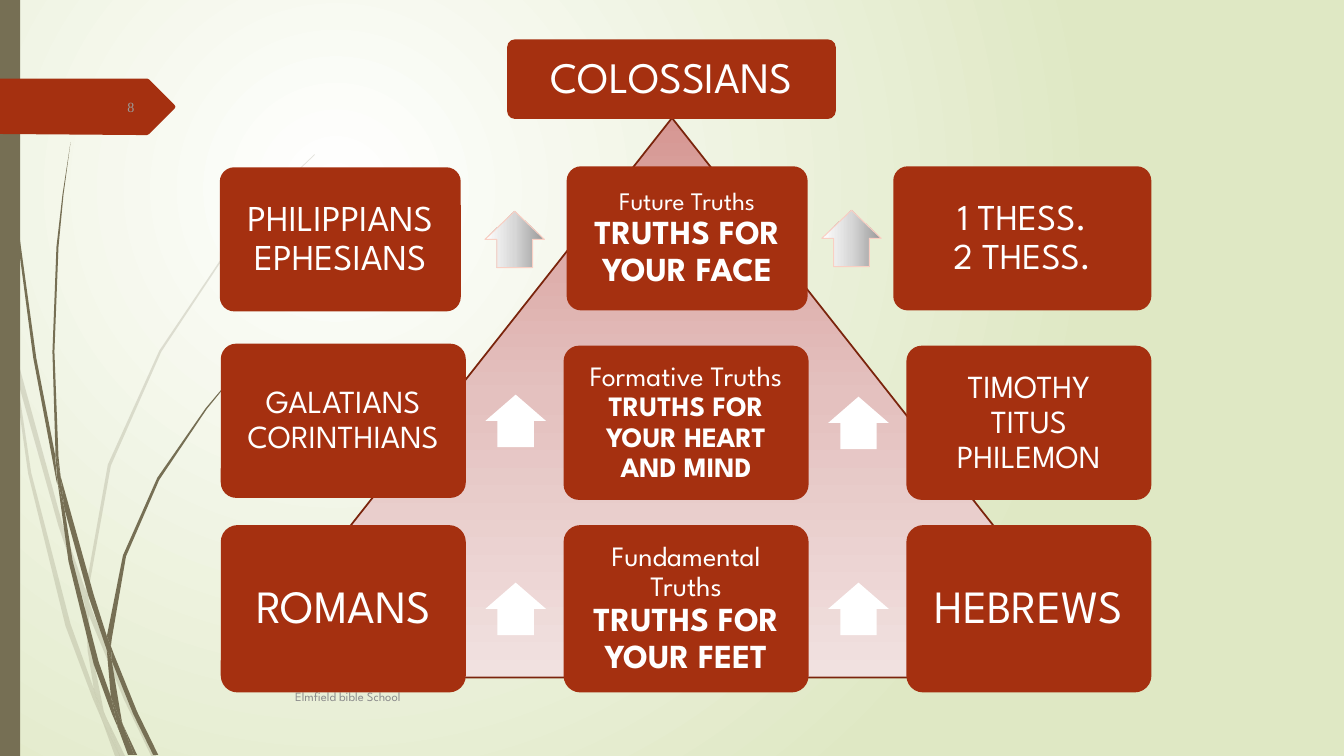
from lxml import etree
from pptx import Presentation
from pptx.dml.color import RGBColor
from pptx.enum.shapes import MSO_SHAPE as Shape
from pptx.enum.text import MSO_ANCHOR as Anchor, PP_ALIGN as Align
from pptx.oxml.ns import qn
from pptx.util import Inches, Pt

THEME = {
    "card": "A53010", "text": "FFFFFF", "wisp": "766F54", "outline": "7A240C",
    "arrow_edge": "F9CFC3", "footer": "8C8C8C", "number": "9B9A98",
    "font": "League Spartan", "number_font": "Times New Roman",
    "footer_size": 9, "number_size": 10,
    "page": [(0, "FFFFFF"), (100, "DFE8C4")],
    "pyramid": [(0, "D69793"), (50, "E4C1BF"), (100, "F1E1E0")],
    "silver": [(0, "979797"), (50, "D7D7D7"), (100, "FFFFFF")],
}

# Cards: left, top, width, inset, lines of (text, size, bold)
TITLE = (5.03, 0.39, 3.26, 0.15, [("COLOSSIANS", 31, False)])
TITLE_HEIGHT = 0.79
ROWS = [
    {"height": 1.43, "arrow": (0.56, 0.59), "silver": True, "cards": [
        (2.18, 1.66, 2.39, 0.15, [("PHILIPPIANS", 26, False), ("EPHESIANS", 26, False)]),
        (5.62, 1.65, 2.39, 0.11, [("Future Truths", 18, False), ("TRUTHS FOR YOUR FACE", 24, True)]),
        (8.86, 1.65, 2.56, 0.15, [("1 THESS.", 26, False), ("2 THESS.", 26, False)])]},
    {"height": 1.53, "arrow": (0.52, 0.6), "silver": False, "cards": [
        (2.19, 3.41, 2.43, 0.15, [("GALATIANS", 23, False), ("CORINTHIANS", 23, False)]),
        (5.59, 3.43, 2.43, 0.12, [("Formative Truths", 20, False),
                                  ("TRUTHS FOR YOUR HEART AND MIND", 20, True)]),
        (8.99, 3.43, 2.43, 0.15, [("TIMOTHY", 23, False), ("TITUS", 23, False),
                                  ("PHILEMON", 23, False)])]},
    {"height": 1.66, "arrow": (0.52, 0.6), "silver": False, "cards": [
        (2.19, 5.21, 2.43, 0.18, [("ROMANS", 33, False)]),
        (5.59, 5.21, 2.43, 0.12, [("Fundamental Truths", 20, False), ("TRUTHS FOR YOUR FEET", 24, True)]),
        (8.99, 5.21, 2.43, 0.18, [("HEBREWS", 33, False)])]},
]

# Grass blades: outline points in inches
PALE_BLADES = [
    [(0.11, 3.5), (0.09, 3.22), (0, 2.82), (0, 2.99), (0.1, 3.44)],
    [(0.58, 5.22), (0.84, 5.99), (0.85, 5.86), (0.62, 5.2), (0.14, 3.45), (0.17, 3.76)],
    [(0.92, 6.07), (0.88, 5.96), (0.88, 6.1), (1.23, 6.94), (1.5, 7.5), (1.55, 7.5), (1.27, 6.92)],
    [(1.19, 7.5), (1.24, 7.5), (1.05, 7.11)],
    [(0.93, 6.83), (0.7, 6.19), (0.31, 4.69), (0.17, 3.76), (0.11, 3.5), (0.28, 4.7),
     (0.65, 6.21), (0.92, 6.93), (1.01, 7.14), (0.99, 7.07)],
    [(0.84, 5.99), (0.87, 6.46), (0.93, 6.83), (0.96, 6.92), (1.05, 7.11), (1.03, 7.06),
     (0.91, 6.46), (0.88, 6.1), (0.88, 6.08)],
    [(0.88, 5.84), (1.1, 4.62), (1.6, 3.49), (2.29, 2.45), (2.68, 1.98), (2.9, 1.75),
     (3.12, 1.54), (3.12, 1.53), (2.89, 1.75), (2.68, 1.97), (2.28, 2.44), (1.58, 3.48),
     (1.07, 4.61), (0.85, 5.84), (0.85, 5.86), (0.88, 5.96)],
    [(1.01, 7.14), (1.14, 7.5), (1.19, 7.5)],
    [(0.88, 6.08), (0.88, 6.1), (0.88, 5.96), (0.85, 5.86), (0.84, 5.99)],
    [(0.96, 6.92), (0.93, 6.83), (0.99, 7.07), (1.01, 7.14), (1.19, 7.5), (1.05, 7.11)],
]
DARK_BLADES = [
    [(0.07, 1.1), (0.17, 2.33), (0.33, 3.55), (0.56, 4.77), (0.57, 4.81), (0.55, 4.57),
     (0.55, 4.53), (0.36, 3.55), (0.19, 2.32), (0.08, 1.09), (0.05, 0.48), (0.04, 0),
     (0.03, 0), (0.04, 0.48)],
    [(0.88, 5.92), (1.06, 6.45), (1.06, 6.31), (0.93, 5.9), (0.6, 4.72), (0.64, 5.05)],
    [(1.13, 6.49), (1.1, 6.41), (1.11, 6.56), (1.32, 7.08), (1.52, 7.49), (1.57, 7.49), (1.36, 7.06)],
    [(1.1, 6.91), (0.98, 6.57), (0.72, 5.56), (0.64, 5.05), (0.57, 4.77), (0.68, 5.57),
     (0.93, 6.59), (1.11, 7.08), (1.17, 7.22), (1.16, 7.17)],
    [(0.6, 4.72), (0.58, 4.53), (0.54, 3.49), (0.58, 2.45), (0.63, 1.93), (0.7, 1.41),
     (0.62, 1.93), (0.56, 2.45), (0.52, 3.49), (0.55, 4.49)],
    [(1.33, 7.49), (1.36, 7.49), (1.22, 7.19)],
    [(0.57, 4.77), (0.64, 5.05), (0.6, 4.72), (0.55, 4.49), (0.55, 4.53)],
    [(1.11, 6.33), (1.25, 5.52), (1.58, 4.76), (2.05, 4.06), (2.31, 3.74), (2.45, 3.59),
     (2.61, 3.44), (2.6, 3.44), (2.45, 3.58), (2.31, 3.73), (2.04, 4.05), (1.56, 4.74),
     (1.22, 5.51), (1.06, 6.31), (1.1, 6.41)],
    [(1.17, 7.22), (1.27, 7.49), (1.31, 7.49)],
    [(1.06, 6.45), (1.1, 6.91), (1.16, 7.06), (1.22, 7.19), (1.21, 7.16), (1.11, 6.56), (1.09, 6.51)],
    [(1.06, 6.45), (1.09, 6.51), (1.11, 6.56), (1.1, 6.41), (1.06, 6.31)],
    [(1.16, 7.06), (1.1, 6.91), (1.16, 7.17), (1.17, 7.22), (1.3, 7.49), (1.33, 7.49), (1.22, 7.19)],
]
NUMBER_TAG = [(1.73, 1.08), (1.48, 1.33), (1.46, 1.34), (1.36, 1.34), (0, 1.33), (0, 0.78),
              (1.46, 0.78), (1.48, 0.79), (1.73, 1.04), (1.74, 1.06)]


def color(name):
    return RGBColor.from_string(THEME[name])


def paint(shape, fill, line=None, width=0.75):
    shape.shadow.inherit = False
    shape.fill.solid()
    shape.fill.fore_color.rgb = color(fill)
    if line:
        shape.line.color.rgb = color(line)
        shape.line.width = Pt(width)
    else:
        shape.line.fill.background()


def set_gradient(fill, owner, stops, angle=None):
    """Fill with the stops: linear at an angle, or circular without one."""
    fill.gradient()
    gradient = next(owner.iter(qn("a:gradFill")))
    for child in list(gradient):
        gradient.remove(child)
    stop_list = etree.SubElement(gradient, qn("a:gsLst"))
    for position, value in stops:
        stop = etree.SubElement(stop_list, qn("a:gs"), pos=str(position * 1000))
        etree.SubElement(stop, qn("a:srgbClr"), val=value)
    if angle is None:
        circle = etree.SubElement(gradient, qn("a:path"), path="circle")
        etree.SubElement(circle, qn("a:fillToRect"), l="50000", t="50000", r="100000", b="100000")
    else:
        etree.SubElement(gradient, qn("a:lin"), ang=str(angle * 60000), scaled="0")


def add_outline(slide, points, fill, alpha=None):
    corners = [(Inches(x), Inches(y)) for x, y in points]
    builder = slide.shapes.build_freeform(*corners[0], scale=1.0)
    builder.add_line_segments(corners[1:], close=True)
    shape = builder.convert_to_shape()
    paint(shape, fill)
    if alpha:
        solid = next(shape.element.iter(qn("a:srgbClr")))
        etree.SubElement(solid, qn("a:alpha"), val=str(alpha * 1000))


def add_shape(slide, kind, left, top, width, height):
    return slide.shapes.add_shape(kind, Inches(left), Inches(top), Inches(width), Inches(height))


def add_run(paragraph, text, size, font, fill, bold=False):
    run = paragraph.add_run()
    run.text = text
    run.font.size, run.font.name, run.font.bold = Pt(size), font, bold
    run.font.color.rgb = color(fill)


def add_card(slide, card, height):
    left, top, width, inset, lines = card
    shape = add_shape(slide, Shape.ROUNDED_RECTANGLE, left, top, width, height)
    shape.adjustments[0] = 0.1
    paint(shape, "card")
    frame = shape.text_frame
    frame.word_wrap, frame.vertical_anchor = True, Anchor.MIDDLE
    frame.margin_left = frame.margin_right = frame.margin_top = frame.margin_bottom = Inches(inset)
    paragraph = frame.paragraphs[0]
    paragraph.alignment, paragraph.line_spacing = Align.CENTER, 0.9
    for index, (text, size, bold) in enumerate(lines):
        if index:
            paragraph.add_line_break()
        add_run(paragraph, text, size, THEME["font"], "text", bold)


def add_label(slide, box, text, size, font, fill, align):
    label = slide.shapes.add_textbox(*(Inches(value) for value in box))
    label.text_frame.word_wrap = True
    label.text_frame.vertical_anchor = Anchor.MIDDLE
    paragraph = label.text_frame.paragraphs[0]
    paragraph.alignment = align
    add_run(paragraph, text, size, font, fill)


def add_row(slide, row):
    cards, height = row["cards"], row["height"]
    for card in cards:
        add_card(slide, card, height)
    # Each arrow sits midway between two neighbouring cards
    length, breadth = row["arrow"]
    for before, after in zip(cards, cards[1:]):
        middle = (before[0] + before[2] + after[0]) / 2 + 0.01
        top = before[1] + (height - breadth) / 2
        arrow = add_shape(slide, Shape.RIGHT_ARROW, middle - length / 2, top, length, breadth)
        arrow.rotation = 270
        arrow.adjustments[0], arrow.adjustments[1] = 0.6, 0.5
        paint(arrow, "text", "arrow_edge" if row["silver"] else None)
        if row["silver"]:
            set_gradient(arrow.fill, arrow.element, THEME["silver"], 270)


def main():
    presentation = Presentation()
    presentation.slide_width, presentation.slide_height = Inches(13.33), Inches(7.5)
    slide = presentation.slides.add_slide(presentation.slide_layouts[6])
    set_gradient(slide.background.fill, slide.element, THEME["page"])

    # Side decoration
    for blades, alpha in ((PALE_BLADES, 20), (DARK_BLADES, None)):
        for blade in blades:
            add_outline(slide, blade, "wisp", alpha)
    paint(add_shape(slide, Shape.RECTANGLE, 0, 0, 0.2, 7.5), "wisp")
    add_outline(slide, NUMBER_TAG, "card")

    # Pyramid, footer and slide number
    pyramid = add_shape(slide, Shape.ISOSCELES_TRIANGLE, 2.29, 1.17, 8.75, 5.55)
    paint(pyramid, "card", "outline", 1.25)
    set_gradient(pyramid.fill, pyramid.element, THEME["pyramid"], 90)
    add_label(slide, (2.83, 6.71, 8.33, 0.4), "Elmfield bible School", THEME["footer_size"],
              THEME["font"], "footer", Align.LEFT)
    add_label(slide, (0.58, 0.86, 0.85, 0.4), "8", THEME["number_size"],
              THEME["number_font"], "number", Align.RIGHT)

    # Cards
    for row in ROWS:
        add_row(slide, row)
    add_card(slide, TITLE, TITLE_HEIGHT)
    presentation.save("out.pptx")


if __name__ == "__main__":
    main()
